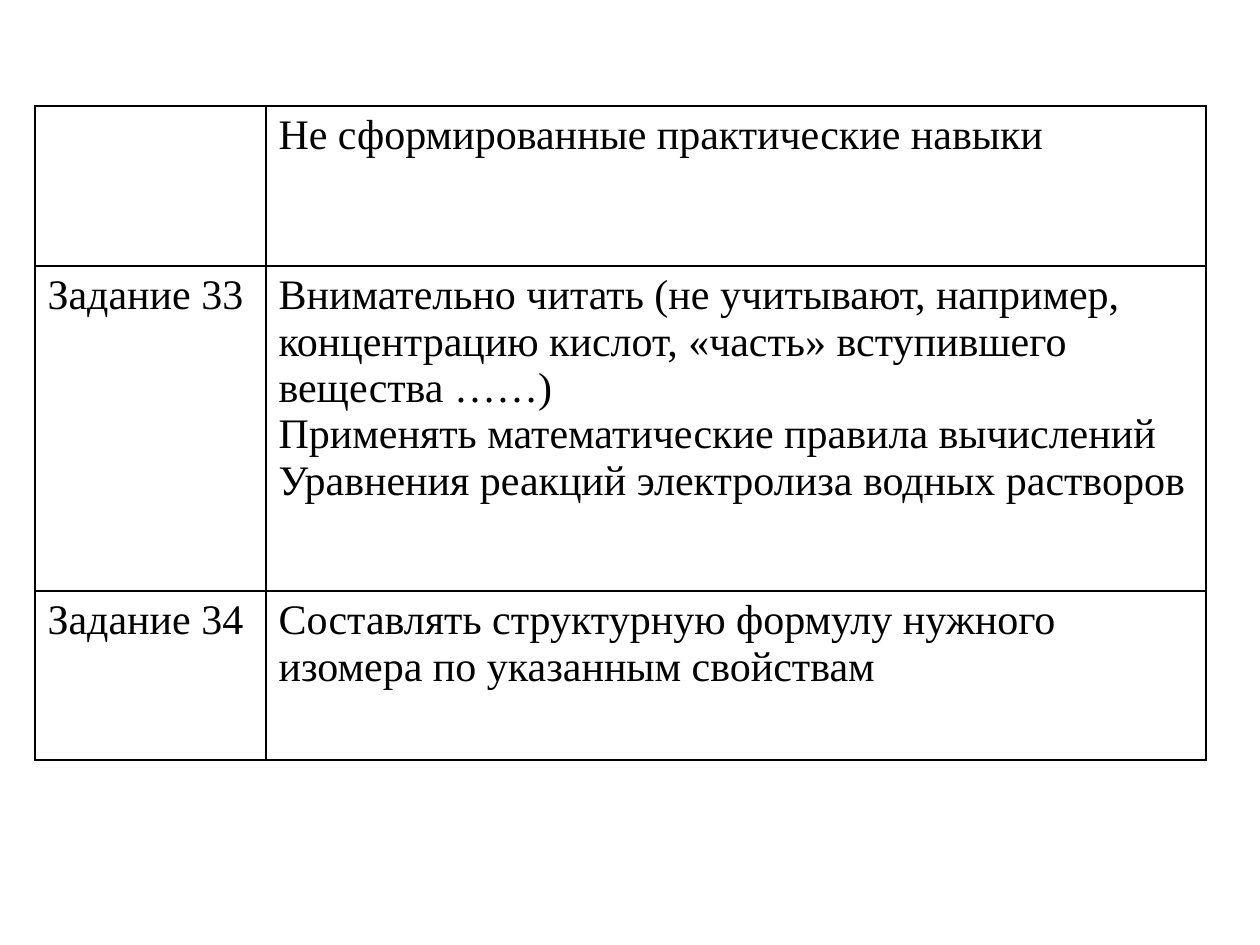
from lxml import etree
from pptx import Presentation, util as u
from pptx.dml.color import RGBColor
from pptx.oxml.ns import qn

PX = 914400 // 126
BLANK_LAYOUT = 6

TASK_ROWS = [
    (160, "", ["Не сформированные практические навыки"]),
    (325, "Задание 33", [
        "Внимательно читать (не учитывают, например, концентрацию кислот, "
        "«часть» вступившего вещества ……)",
        "Применять математические правила вычислений",
        "Уравнения реакций электролиза водных растворов",
    ]),
    (169, "Задание 34", [
        "Составлять структурную формулу нужного изомера по указанным свойствам",
    ]),
]


def px(length):
    return u.Emu(length * PX)


def color(hex_value):
    return RGBColor.from_string(hex_value)


class SlideBuilder:
    font = "Times New Roman"
    size = 24
    ink = "000000"
    border = 1

    def __init__(self, slide):
        self.slide = slide

    def add_lines(self, cell, lines):
        frame = cell.text_frame
        for index, line in enumerate(lines):
            paragraph = frame.add_paragraph() if index else frame.paragraphs[0]
            run = paragraph.add_run()
            run.text = line
            run.font.name = self.font
            run.font.size = u.Pt(self.size)
            run.font.color.rgb = color(self.ink)

    def outline(self, cell):
        """Draw all four borders; they must precede the fill in the cell's XML."""
        properties = cell._tc.get_or_add_tcPr()
        for side in ("lnL", "lnR", "lnT", "lnB"):
            line = etree.SubElement(properties, qn(f"a:{side}"), w=str(u.Pt(self.border)))
            fill = etree.SubElement(line, qn("a:solidFill"))
            etree.SubElement(fill, qn("a:srgbClr"), val=self.ink)

    def table(self, left, top, widths, rows):
        """Add a table from rows of (height, label, lines)."""
        height = sum(row[0] for row in rows)
        table = self.slide.shapes.add_table(
            len(rows), len(widths), px(left), px(top), px(sum(widths)), px(height)
        ).table
        table.first_row = table.horz_banding = False
        for column, width in zip(table.columns, widths):
            column.width = px(width)
        for row, (row_height, label, lines) in zip(table.rows, rows):
            row.height = px(row_height)
            for cell, content in zip(row.cells, ([label] if label else [], lines)):
                self.outline(cell)
                cell.fill.background()
                self.add_lines(cell, content)


def main():
    deck = Presentation()
    deck.slide_width, deck.slide_height = px(1260), px(945)
    builder = SlideBuilder(deck.slides.add_slide(deck.slide_layouts[BLANK_LAYOUT]))
    builder.table(35, 106, (231, 940), TASK_ROWS)
    deck.save("out.pptx")


if __name__ == "__main__":
    main()
